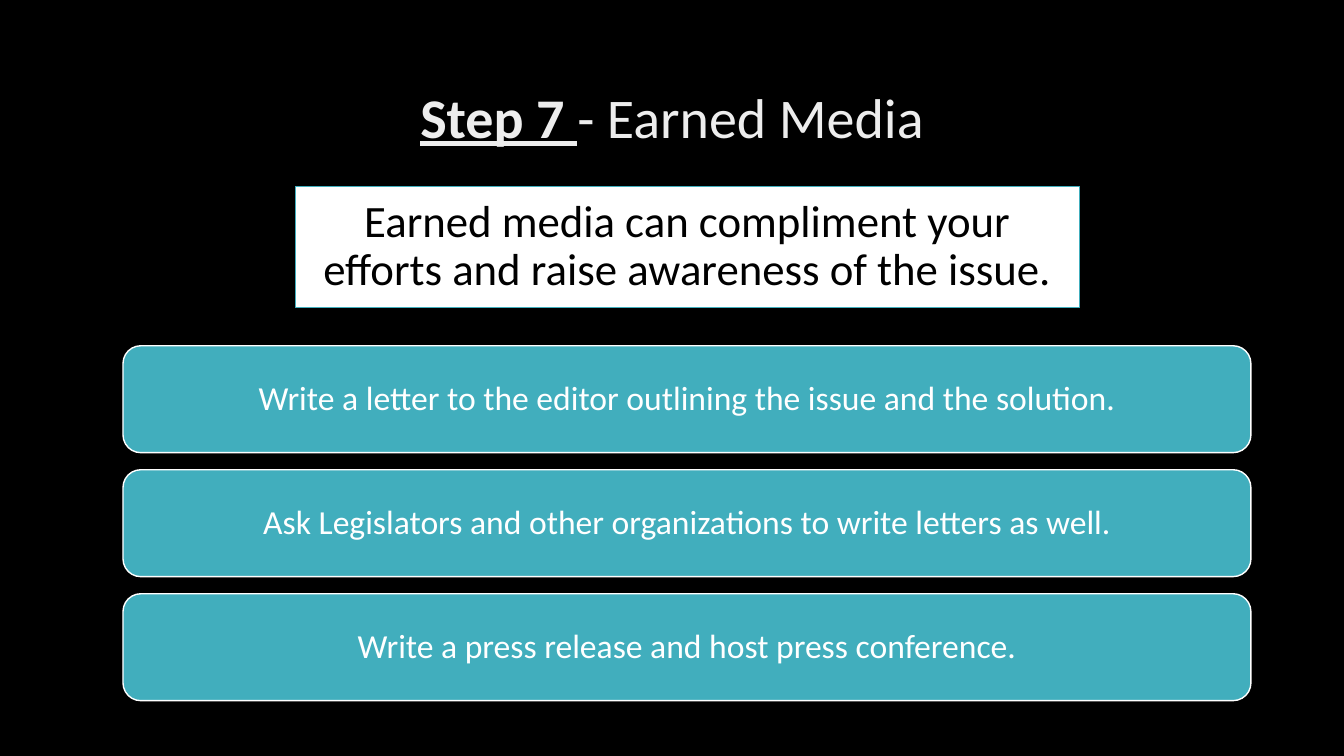
from dataclasses import dataclass

from pptx import Presentation
from pptx.dml.color import RGBColor
from pptx.enum.shapes import MSO_SHAPE
from pptx.enum.text import MSO_ANCHOR, MSO_AUTO_SIZE, PP_ALIGN
from pptx.util import Pt

RECTANGLE = MSO_SHAPE.RECTANGLE
ROUNDED = MSO_SHAPE.ROUNDED_RECTANGLE
MIDDLE = MSO_ANCHOR.MIDDLE
CENTER = PP_ALIGN.CENTER
NO_AUTOFIT = MSO_AUTO_SIZE.NONE
TITLE_ONLY = 5


@dataclass(frozen=True)
class Theme:
    font: str = "Calibri"
    background: RGBColor = RGBColor(0x00, 0x00, 0x00)
    title: RGBColor = RGBColor(0xED, 0xED, 0xED)
    teal: RGBColor = RGBColor(0x41, 0xAE, 0xBD)
    white: RGBColor = RGBColor(0xFF, 0xFF, 0xFF)
    black: RGBColor = RGBColor(0x00, 0x00, 0x00)
    title_size: int = 40
    message_size: int = 32
    action_size: int = 24


THEME = Theme()

TITLE_PARTS = [("Step 7 ", True), ("- Earned Media", False)]
MESSAGE = "Earned media can compliment your efforts and raise awareness of the issue."
ACTIONS = [
    "Write a letter to the editor outlining the issue and the solution.",
    "Ask Legislators and other organizations to write letters as well.",
    "Write a press release and host press conference.",
]

# Action bars: left, top, width, height and distance between tops, in points
BAR_LEFT, BAR_TOP, BAR_WIDTH, BAR_HEIGHT = 87.84, 246.96, 805.68, 76.4
BAR_STEP = 88.56


def apply(target, values):
    for name, value in values.items():
        setattr(target, name, value)


def style_run(run, size, color, **extra):
    apply(run.font, {"name": THEME.font, "size": Pt(size), **extra})
    run.font.color.rgb = color


def add_title(slide):
    title = slide.shapes.title
    apply(title, {"left": Pt(66), "top": Pt(28.8), "width": Pt(828), "height": Pt(104.4)})
    frame = title.text_frame
    apply(frame, {"vertical_anchor": MIDDLE, "word_wrap": True, "auto_size": NO_AUTOFIT})
    heading = frame.paragraphs[0]
    apply(heading, {"alignment": CENTER, "line_spacing": 1.07, "space_after": Pt(8)})
    for text, emphasized in TITLE_PARTS:
        run = heading.add_run()
        run.text = text
        style_run(run, THEME.title_size, THEME.title, bold=emphasized, underline=emphasized)


def add_panel(slide, kind, box, text, fill, line, color, size, inset):
    panel = slide.shapes.add_shape(kind, *(Pt(length) for length in box))
    panel.shadow.inherit = False
    panel.fill.solid()
    panel.fill.fore_color.rgb = fill
    panel.line.color.rgb = line
    panel.line.width = Pt(1)
    frame = panel.text_frame
    sides = ("left", "top", "right", "bottom")
    apply(frame, {f"margin_{side}": Pt(inset) for side in sides})
    apply(frame, {"vertical_anchor": MIDDLE, "word_wrap": True})
    paragraph = frame.paragraphs[0]
    apply(paragraph, {"alignment": CENTER, "line_spacing": 0.9})
    run = paragraph.add_run()
    run.text = text
    style_run(run, size, color)


def main():
    deck = Presentation()
    apply(deck, {"slide_width": Pt(960), "slide_height": Pt(540)})
    slide = deck.slides.add_slide(deck.slide_layouts[TITLE_ONLY])
    slide.background.fill.solid()
    slide.background.fill.fore_color.rgb = THEME.background

    add_title(slide)

    # Action bars
    for index, action in enumerate(ACTIONS):
        box = (BAR_LEFT, BAR_TOP + index * BAR_STEP, BAR_WIDTH, BAR_HEIGHT)
        add_panel(slide, ROUNDED, box, action, THEME.teal, THEME.white,
                  THEME.white, THEME.action_size, 7.2)

    # Key message
    add_panel(slide, RECTANGLE, (210.96, 133.2, 560.16, 86.4), MESSAGE, THEME.white,
              THEME.teal, THEME.black, THEME.message_size, 9.36)

    deck.save("out.pptx")


if __name__ == "__main__":
    main()
